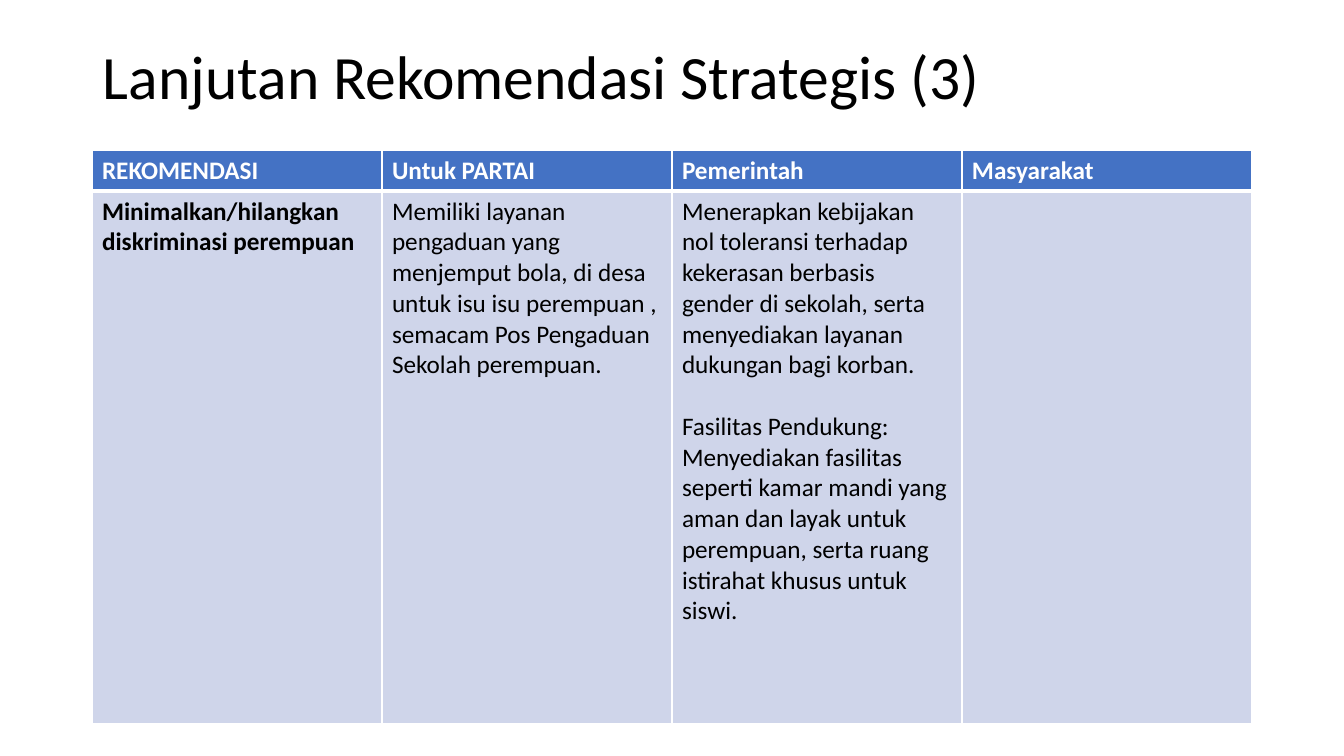
import pptx
import pptx.dml.color
import pptx.enum.text
import pptx.oxml
import pptx.oxml.ns
import pptx.util

RGBColor = pptx.dml.color.RGBColor
MSO_ANCHOR = pptx.enum.text.MSO_ANCHOR

WHITE = RGBColor(0xFF, 0xFF, 0xFF)
BLACK = RGBColor(0x00, 0x00, 0x00)
HEADER_BLUE = RGBColor(0x44, 0x72, 0xC4)
BODY_BLUE = RGBColor(0xCF, 0xD5, 0xEA)

FONT = "Calibri"
EMU_PER_PX = 914400 / 100.8

HEADERS = ["REKOMENDASI", "Untuk PARTAI", "Pemerintah", "Masyarakat"]
RECOMMENDATION = [
    ["Minimalkan/hilangkan diskriminasi perempuan"],
    ["Memiliki layanan pengaduan yang menjemput bola, di desa untuk isu isu "
     "perempuan , semacam Pos Pengaduan Sekolah perempuan."],
    ["Menerapkan kebijakan nol toleransi terhadap kekerasan berbasis gender di "
     "sekolah, serta menyediakan layanan dukungan bagi korban.",
     "Fasilitas Pendukung: Menyediakan fasilitas seperti kamar mandi yang aman "
     "dan layak untuk perempuan, serta ruang istirahat khusus untuk siswi."],
    [],
]


def px(n):
    return pptx.util.Emu(round(n * EMU_PER_PX))


def write(tf, paragraphs, size=18, color=BLACK, bold=False, spacing=None, gap=0):
    tf.word_wrap = True
    for i, text in enumerate(paragraphs):
        p = tf.add_paragraph() if i else tf.paragraphs[0]
        p.line_spacing = spacing
        if i:
            p.space_before = pptx.util.Pt(gap)
        r = p.add_run()
        r.text = text
        r.font.name = FONT
        r.font.size = pptx.util.Pt(size)
        r.font.bold = bold
        r.font.color.rgb = color


class Deck:
    def __init__(self, width, height):
        self.prs = pptx.Presentation()
        self.prs.slide_width = px(width)
        self.prs.slide_height = px(height)
        self.s = self.prs.slides.add_slide(self.prs.slide_layouts[6])

    def title(self, text, x, y, w, h):
        sp = self.s.shapes.add_textbox(px(x), px(y), px(w), px(h))
        sp.text_frame.vertical_anchor = MSO_ANCHOR.MIDDLE
        write(sp.text_frame, [text], size=44, spacing=0.9)

    def border(self, cell, **widths):
        tc_pr = cell._tc.get_or_add_tcPr()
        for side, width in widths.items():
            tc_pr.append(pptx.oxml.parse_xml(
                f'<a:ln{side} {pptx.oxml.ns.nsdecls("a")} w="{pptx.util.Pt(width)}">'
                f'<a:solidFill><a:srgbClr val="{WHITE}"/></a:solidFill></a:ln{side}>'))

    def cell(self, cell, paragraphs, fill, top, bottom, **style):
        self.border(cell, L=1, R=1, T=top, B=bottom)
        cell.fill.solid()
        cell.fill.fore_color.rgb = fill
        write(cell.text_frame, paragraphs, **style)

    def table(self, x, y, col_width, row_heights):
        cols = len(HEADERS)
        table = self.s.shapes.add_table(
            len(row_heights), cols, px(x), px(y),
            px(col_width * cols), px(sum(row_heights))).table
        for col in table.columns:
            col.width = px(col_width)
        for row, height in zip(table.rows, row_heights):
            row.height = px(height)
        for i, (header, body) in enumerate(zip(HEADERS, RECOMMENDATION)):
            self.cell(table.cell(0, i), [header], HEADER_BLUE, 1, 3,
                      color=WHITE, bold=True)
            self.cell(table.cell(1, i), body, BODY_BLUE, 3, 1,
                      bold=i == 0, gap=22)


def main():
    deck = Deck(1344, 756)
    deck.title("Lanjutan Rekomendasi Strategis (3)", 93, 40, 1160, 79)
    deck.table(92, 150, 290, [41, 533])
    deck.prs.save("out.pptx")


if __name__ == "__main__":
    main()
